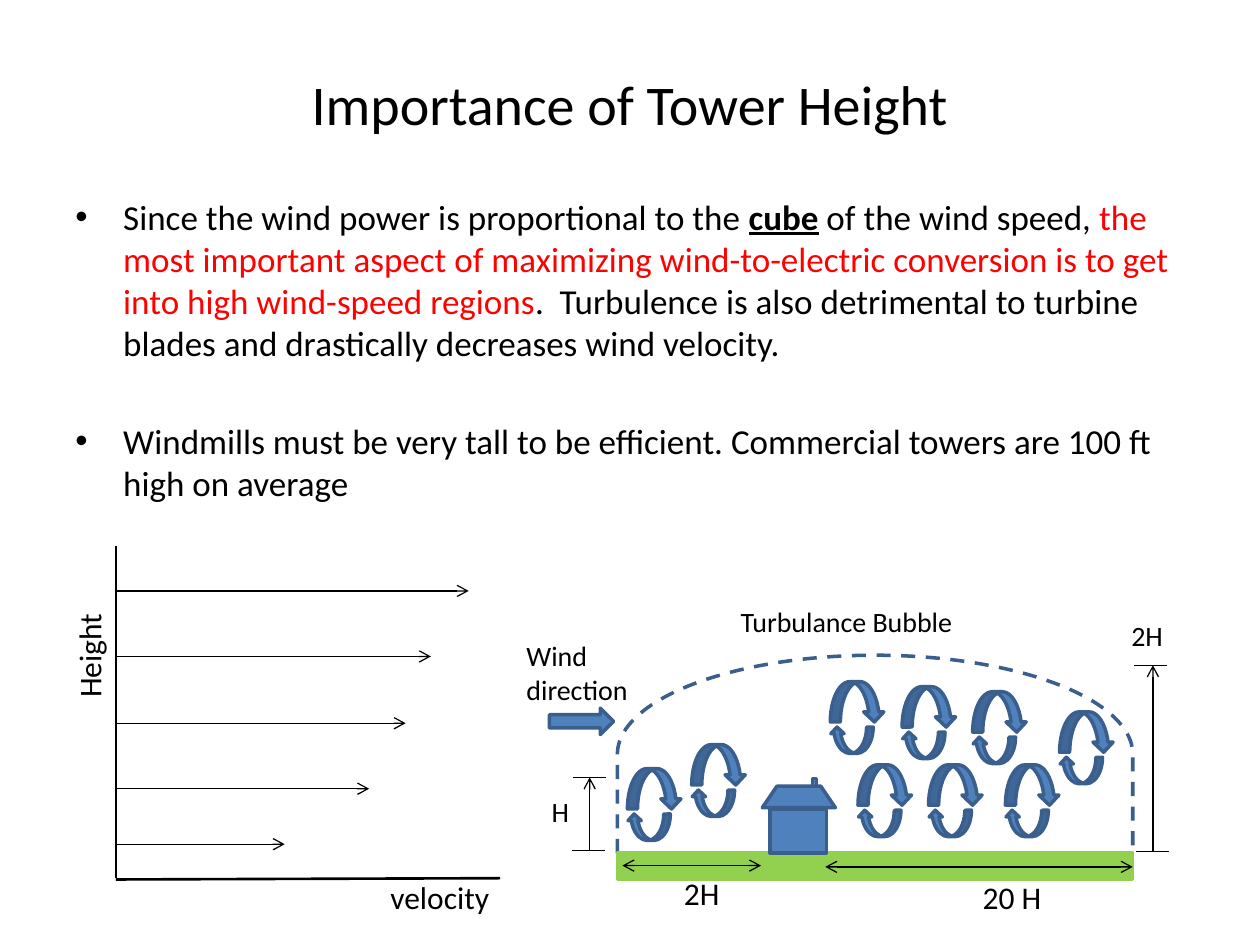
import pptx
import pptx.dml.color
import pptx.enum.dml
import pptx.enum.shapes
import pptx.enum.text
import pptx.oxml.ns
import pptx.util
from lxml import etree

Inches, Pt = pptx.util.Inches, pptx.util.Pt
SHAPES = pptx.enum.shapes.MSO_SHAPE
ALIGN = pptx.enum.text.PP_ALIGN
ANCHOR = pptx.enum.text.MSO_ANCHOR
qn = pptx.oxml.ns.qn

COLORS = {"text": "000000", "stress": "FF0000", "blue": "4F81BD",
          "outline": "3A5F8C", "grass": "92D050"}
FONT = "Calibri"

TITLE = "Importance of Tower Height"
# each bullet is a list of (text, font format, colour)
BULLETS = [
    [("Since the wind power is proportional to the ", {}, "text"),
     ("cube", {"bold": True, "underline": True}, "text"),
     (" of the wind speed, ", {}, "text"),
     ("the most important aspect of maximizing wind-to-electric conversion "
      "is to get into high wind-speed regions", {}, "stress"),
     (".  Turbulence is also detrimental to turbine blades and drastically "
      "decreases wind velocity.", {}, "text")],
    [("Windmills must be very tall to be efficient. Commercial towers are "
      "100 ft high on average", {}, "text")],
]
BULLET_INDENT, BULLET_GAP = 0.38, 32

# lines, box, size, rotation
LABELS = [
    (["Height"], (0.22, 4.95, 0.97, 0.4), 18, 270),
    (["velocity"], (3, 6.92, 1.08, 0.4), 18, 0),
    (["Wind", "direction"], (4.08, 5.02, 1.22, 0.64), 16, 0),
    (["H"], (4.28, 6.26, 0.34, 0.37), 16, 0),
    (["Turbulance Bubble"], (5.78, 4.75, 1.97, 0.37), 16, 0),
    (["2H"], (5.33, 6.89, 0.67, 0.4), 18, 0),
    (["20 H"], (7.7, 6.92, 0.71, 0.4), 18, 0),
    (["2H"], (8.88, 4.86, 0.58, 0.37), 16, 0),
]

AXIS_X = 0.92
AXES = [((AXIS_X, 4.33), (AXIS_X, 6.97)), ((AXIS_X, 6.98), (3.97, 6.97))]
# height of each wind arrow, and where its tip ends
WIND_SPEEDS = [(4.69, 3.72), (5.21, 3.42), (5.74, 3.22), (6.26, 2.93), (6.7, 2.26)]

# start, end, arrowheads
DIMENSIONS = [
    ((4.94, 6.87), (6.04, 6.87), ("headEnd", "tailEnd")),
    ((6.55, 6.88), (8.99, 6.88), ("headEnd", "tailEnd")),
    ((9.15, 6.76), (9.15, 5.28), ("tailEnd",)),
    ((4.68, 6.75), (4.68, 6.17), ("tailEnd",)),
]
TICK_WIDTH = 0.26
TICKS = [(9, 5.28), (9.02, 6.76), (4.55, 6.17), (4.54, 6.75)]

BUBBLE = (6.16, 3.94, 1.57, 4.09)
GROUND = (4.9, 6.77, 4.09, 0.21)
WIND_ARROW = (4.36, 5.62, 0.51, 0.21)
# preset, box, rotation
HOUSE = [
    (SHAPES.RECTANGLE, (6.45, 6.18, 0.03, 0.07), 0),
    (SHAPES.RECTANGLE, (6.11, 6.42, 0.45, 0.35), 0),
    (SHAPES.FLOWCHART_MANUAL_OPERATION, (6.05, 6.24, 0.58, 0.17), 180),
]
SWIRLS = [(6.59, 5.41), (6.81, 6.07), (7.16, 5.45), (7.72, 5.49), (7.37, 6.07),
          (7.98, 6.07), (4.98, 6.1), (8.41, 5.65), (5.49, 5.91)]
SWIRL_DROP = 0.36


def rgb(name):
    return pptx.dml.color.RGBColor.from_string(COLORS[name])


def add_run(paragraph, text, size, color="text", font_format=None):
    run = paragraph.add_run()
    run.text = text
    run.font.color.rgb = rgb(color)
    for key, value in {"name": FONT, "size": Pt(size), **(font_format or {})}.items():
        setattr(run.font, key, value)


def add_textbox(slide, box, rotation=0):
    textbox = slide.shapes.add_textbox(*map(Inches, box))
    textbox.rotation = rotation
    textbox.text_frame.word_wrap = True
    return textbox.text_frame


def add_paragraph(frame, index):
    return frame.add_paragraph() if index else frame.paragraphs[0]


def add_shape(slide, preset, box, rotation=0, fill="blue", outline="outline"):
    shape = slide.shapes.add_shape(preset, *map(Inches, box))
    shape.shadow.inherit = False
    shape.rotation = rotation
    if fill:
        shape.fill.solid()
        shape.fill.fore_color.rgb = rgb(fill)
    else:
        shape.fill.background()
    shape.line.color.rgb = rgb(outline)
    shape.line.width = Pt(2)
    return shape


def add_line(slide, start, end, width=0.75, arrowheads=()):
    line = slide.shapes.add_connector(
        pptx.enum.shapes.MSO_CONNECTOR.STRAIGHT, *map(Inches, (*start, *end)))
    line.line.color.rgb = rgb("text")
    line.line.width = Pt(width)
    for arrowhead in arrowheads:
        etree.SubElement(line.line._get_or_add_ln(), qn("a:" + arrowhead), type="arrow")
    etree.SubElement(line._element.spPr, qn("a:effectLst"))


def add_title(slide):
    frame = add_textbox(slide, (0.5, 0.3, 9, 1.03))
    frame.vertical_anchor = ANCHOR.MIDDLE
    frame.paragraphs[0].alignment = ALIGN.CENTER
    add_run(frame.paragraphs[0], TITLE, 32)


def add_bullets(slide):
    frame = add_textbox(slide, (0.5, 1.5, 9, 2.83))
    for index, runs in enumerate(BULLETS):
        paragraph = add_paragraph(frame, index)
        paragraph.space_before = Pt(BULLET_GAP if index else 0)
        properties = paragraph._p.get_or_add_pPr()
        properties.set("marL", str(Inches(BULLET_INDENT)))
        properties.set("indent", str(-Inches(BULLET_INDENT)))
        etree.SubElement(properties, qn("a:buFont"), typeface="Arial")
        etree.SubElement(properties, qn("a:buChar"), char="•")
        for text, font_format, color in runs:
            add_run(paragraph, text, 20, color, font_format)


def add_velocity_profile(slide):
    for start, end in AXES:
        add_line(slide, start, end, 1.5)
    for y, tip in WIND_SPEEDS:
        add_line(slide, (AXIS_X, y), (tip, y), arrowheads=("tailEnd",))


def add_turbulence(slide):
    bubble = add_shape(slide, SHAPES.FLOWCHART_DELAY, BUBBLE, 270, fill=None)
    bubble.line.dash_style = pptx.enum.dml.MSO_LINE.DASH
    add_shape(slide, SHAPES.RECTANGLE, GROUND, fill="grass", outline="grass")
    add_shape(slide, SHAPES.RIGHT_ARROW, WIND_ARROW)
    for x, y in SWIRLS:
        add_shape(slide, SHAPES.CURVED_DOWN_ARROW, (x, y, 0.43, 0.32))
        add_shape(slide, SHAPES.CURVED_DOWN_ARROW, (x, y + SWIRL_DROP, 0.34, 0.21), 180)
    for start, end, arrowheads in DIMENSIONS:
        add_line(slide, start, end, arrowheads=arrowheads)
    for x, y in TICKS:
        add_line(slide, (x, y), (x + TICK_WIDTH, y))
    for preset, box, rotation in HOUSE:
        add_shape(slide, preset, box, rotation)


def add_labels(slide):
    for lines, box, size, rotation in LABELS:
        frame = add_textbox(slide, box, rotation)
        for index, text in enumerate(lines):
            add_run(add_paragraph(frame, index), text, size)


def main():
    deck = pptx.Presentation()
    deck.slide_width, deck.slide_height = Inches(10), Inches(7.5)
    slide = deck.slides.add_slide(deck.slide_layouts[6])
    add_title(slide)
    add_bullets(slide)
    add_velocity_profile(slide)
    add_turbulence(slide)
    add_labels(slide)
    deck.save("out.pptx")


if __name__ == "__main__":
    main()
